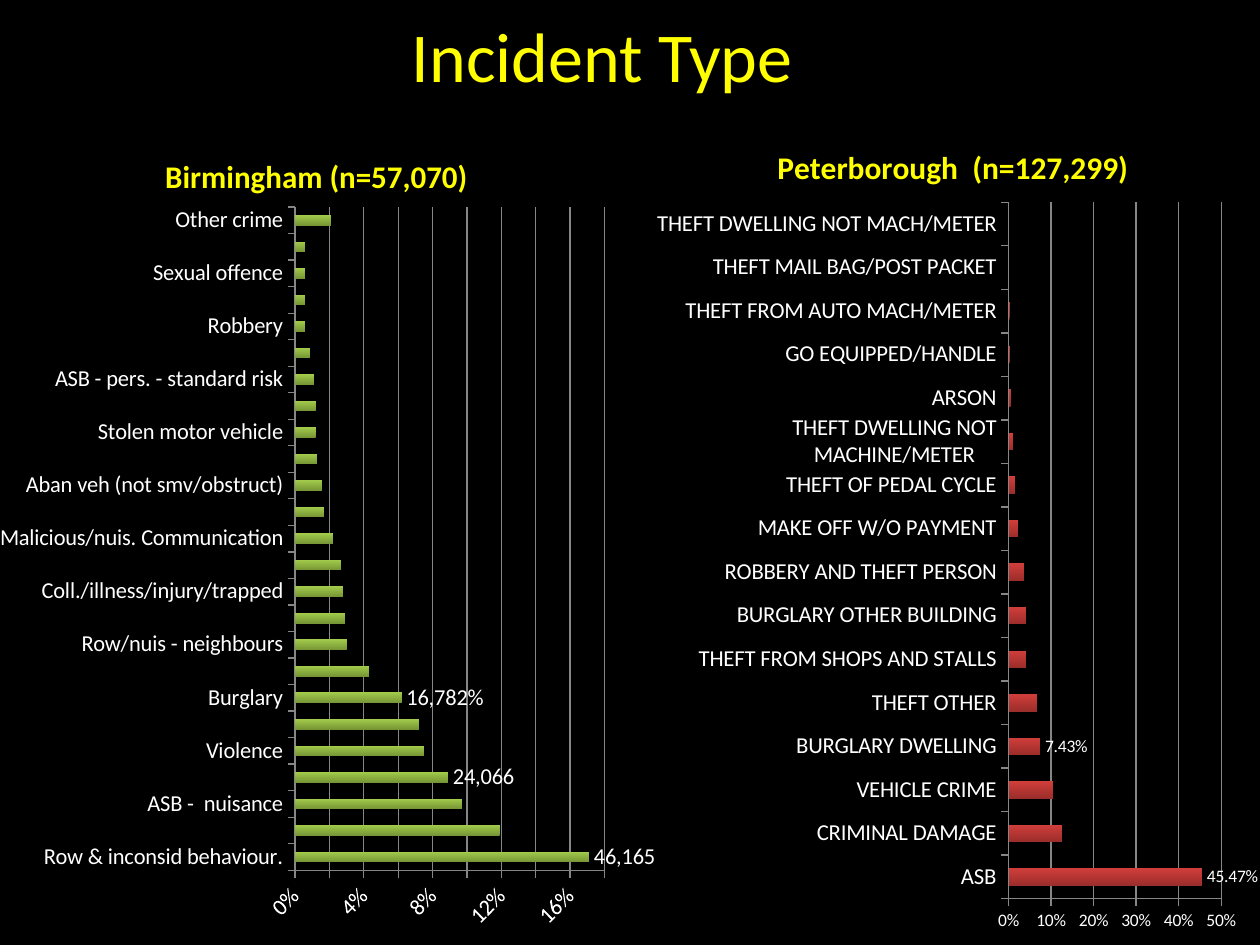
import pptx
import pptx.chart.data
import pptx.dml.color
import pptx.enum.chart
import pptx.enum.text
import pptx.oxml
import pptx.oxml.ns
import pptx.util

Pt = pptx.util.Pt
Color = pptx.dml.color.RGBColor.from_string
qn = pptx.oxml.ns.qn

THEME = {
    "font": "Calibri",
    "background": "000000",
    "heading": "FFFF00",
    "text": "FFFFFF",
    "grid": "868686",
    "green": ("769535", "A2CB4B"),
    "red": ("9B2D2A", "D13E3B"),
    "title_size": 40,
    "chart_title_size": 18,
    "category_size": 13,
}

TITLE = {"text": "Incident Type", "box": (20.16, -13.68, 648, 90)}

CHARTS = [
    {
        "title": "Birmingham (n=57,070)",
        "box": (0, 66.24, 374.4, 473.76),
        "title_at": (0.24, 0.04),
        "plot_at": (0.45, 0.11, 0.48, 0.8),
        "bar": "green",
        "maximum": 0.18,
        "step": 0.02,
        "value_size": 13,
        "label_size": 13,
        "rotation": -45,
        "labels": {0: "46,165", 3: "24,066", 6: "16,782%"},
        "rows": [
            ("Row & inconsid behaviour.", 0.171),
            ("Suspicious circumstances", 0.119),
            ("ASB -  nuisance", 0.097),
            ("Susp circs (inc veh's & prems)", 0.089),
            ("Violence", 0.075),
            ("Theft (not vehicle related)", 0.072),
            ("Burglary", 0.062),
            ("Criminal damage", 0.043),
            ("Row/nuis - neighbours", 0.03),
            ("Veh rel nuis/inapp veh use", 0.029),
            ("Coll./illness/injury/trapped", 0.028),
            ("ASB -  personal", 0.027),
            ("Malicious/nuis. Communication", 0.022),
            ("Noise", 0.017),
            ("Aban veh (not smv/obstruct)", 0.016),
            ("ASB -  environmental", 0.013),
            ("Stolen motor vehicle", 0.012),
            ("Theft from motor vehicle", 0.012),
            ("ASB - pers. - standard risk", 0.011),
            ("Bilking", 0.009),
            ("Robbery", 0.006),
            ("Arson", 0.006),
            ("Sexual offence", 0.006),
            ("Drugs", 0.006),
            ("Other crime", 0.021),
        ],
    },
    {
        "title": "Peterborough  (n=127,299)",
        "box": (371.52, 60.48, 347.76, 479.52),
        "title_at": (0.2, 0.04),
        "plot_at": (0.59, 0.115, 0.35, 0.83),
        "bar": "red",
        "maximum": 0.5,
        "step": 0.1,
        "value_size": 10,
        "label_size": 10,
        "rotation": 0,
        "labels": {0: None, 3: None},
        "rows": [
            ("ASB", 0.4547),
            ("CRIMINAL DAMAGE", 0.1251),
            ("VEHICLE CRIME", 0.1052),
            ("BURGLARY DWELLING", 0.0743),
            ("THEFT OTHER", 0.0667),
            ("THEFT FROM SHOPS AND STALLS", 0.0407),
            ("BURGLARY OTHER BUILDING", 0.0401),
            ("ROBBERY AND THEFT PERSON", 0.0362),
            ("MAKE OFF W/O PAYMENT", 0.0219),
            ("THEFT OF PEDAL CYCLE", 0.0153),
            ("THEFT DWELLING NOT MACHINE/METER", 0.0102),
            ("ARSON", 0.0048),
            ("GO EQUIPPED/HANDLE", 0.0024),
            ("THEFT FROM AUTO MACH/METER", 0.0019),
            ("THEFT MAIL BAG/POST PACKET", 0.0004),
            ("THEFT DWELLING NOT MACH/METER", 0),
        ],
    },
]


def apply(target, values):
    for name, value in values.items():
        setattr(target, name, value)


def style_font(font, size, color="text", bold=False):
    apply(font, {"name": THEME["font"], "size": Pt(size), "bold": bold})
    font.color.rgb = Color(THEME[color])


def style_line(line):
    line.color.rgb = Color(THEME["grid"])
    line.width = Pt(0.75)


def place(parent, index, fractions, inner=False):
    for old in parent.findall(qn("c:layout")):
        parent.remove(old)
    values = [("layoutTarget", "inner")] if inner else []
    values += [("xMode", "edge"), ("yMode", "edge")]
    values += zip("xywh", fractions)
    parts = "".join(f'<c:{name} val="{value}"/>' for name, value in values)
    namespace = pptx.oxml.ns.nsdecls("c")
    layout = pptx.oxml.parse_xml(
        f"<c:layout {namespace}><c:manualLayout>{parts}</c:manualLayout></c:layout>"
    )
    parent.insert(index, layout)


def add_title(slide):
    frame = slide.shapes.add_textbox(*map(Pt, TITLE["box"])).text_frame
    apply(frame, {
        "word_wrap": True,
        "vertical_anchor": pptx.enum.text.MSO_ANCHOR.MIDDLE,
        "text": TITLE["text"],
    })
    paragraph = frame.paragraphs[0]
    paragraph.alignment = pptx.enum.text.PP_ALIGN.CENTER
    style_font(paragraph.runs[0].font, THEME["title_size"], "heading")


def style_axes(chart, item):
    sizes = (THEME["category_size"], item["value_size"])
    for axis, size in zip((chart.category_axis, chart.value_axis), sizes):
        axis.major_tick_mark = pptx.enum.chart.XL_TICK_MARK.OUTSIDE
        style_font(axis.tick_labels.font, size)
        style_line(axis.format.line)
    chart.category_axis.has_major_gridlines = False
    apply(chart.value_axis, {
        "minimum_scale": 0,
        "maximum_scale": item["maximum"],
        "major_unit": item["step"],
        "has_major_gridlines": True,
    })
    style_line(chart.value_axis.major_gridlines.format.line)
    apply(chart.value_axis.tick_labels,
          {"number_format": "0%", "number_format_is_linked": False})
    text_body = chart.value_axis._element.find(qn("c:txPr")).find(qn("a:bodyPr"))
    text_body.set("rot", str(item["rotation"] * 60000))


def style_bars(series, item):
    fill = series.format.fill
    fill.gradient()
    fill.gradient_angle = 90
    for stop, color in zip(fill.gradient_stops, THEME[item["bar"]]):
        stop.color.rgb = Color(color)
    series.data_labels.show_value = False
    for index, text in item["labels"].items():
        label = series.points[index].data_label
        if text is None:
            font = label.font
        else:
            label.text_frame.text = text
            font = label.text_frame.paragraphs[0].runs[0].font
        style_font(font, item["label_size"])
        label.position = pptx.enum.chart.XL_LABEL_POSITION.OUTSIDE_END


def add_bar_chart(slide, item):
    data = pptx.chart.data.CategoryChartData(number_format="0.00%")
    data.categories = [name for name, value in item["rows"]]
    data.add_series("Series 1", [value for name, value in item["rows"]])
    kind = pptx.enum.chart.XL_CHART_TYPE.BAR_CLUSTERED
    chart = slide.shapes.add_chart(kind, *map(Pt, item["box"]), data).chart
    style_font(chart.font, item["label_size"])
    apply(chart, {"has_legend": False, "has_title": True})
    frame = chart.chart_title.text_frame
    frame.text = item["title"]
    style_font(frame.paragraphs[0].runs[0].font, THEME["chart_title_size"], "heading", True)
    place(chart.chart_title._element, 1, item["title_at"])
    place(chart._chartSpace.chart.plotArea, 0, item["plot_at"], True)
    apply(chart.plots[0], {"gap_width": 150, "vary_by_categories": False})
    style_axes(chart, item)
    style_bars(chart.plots[0].series[0], item)


def main():
    presentation = pptx.Presentation()
    apply(presentation, {"slide_width": Pt(720), "slide_height": Pt(540)})
    slide = presentation.slides.add_slide(presentation.slide_layouts[6])
    slide.background.fill.solid()
    slide.background.fill.fore_color.rgb = Color(THEME["background"])
    add_title(slide)
    for item in CHARTS:
        add_bar_chart(slide, item)
    presentation.save("out.pptx")


if __name__ == "__main__":
    main()
